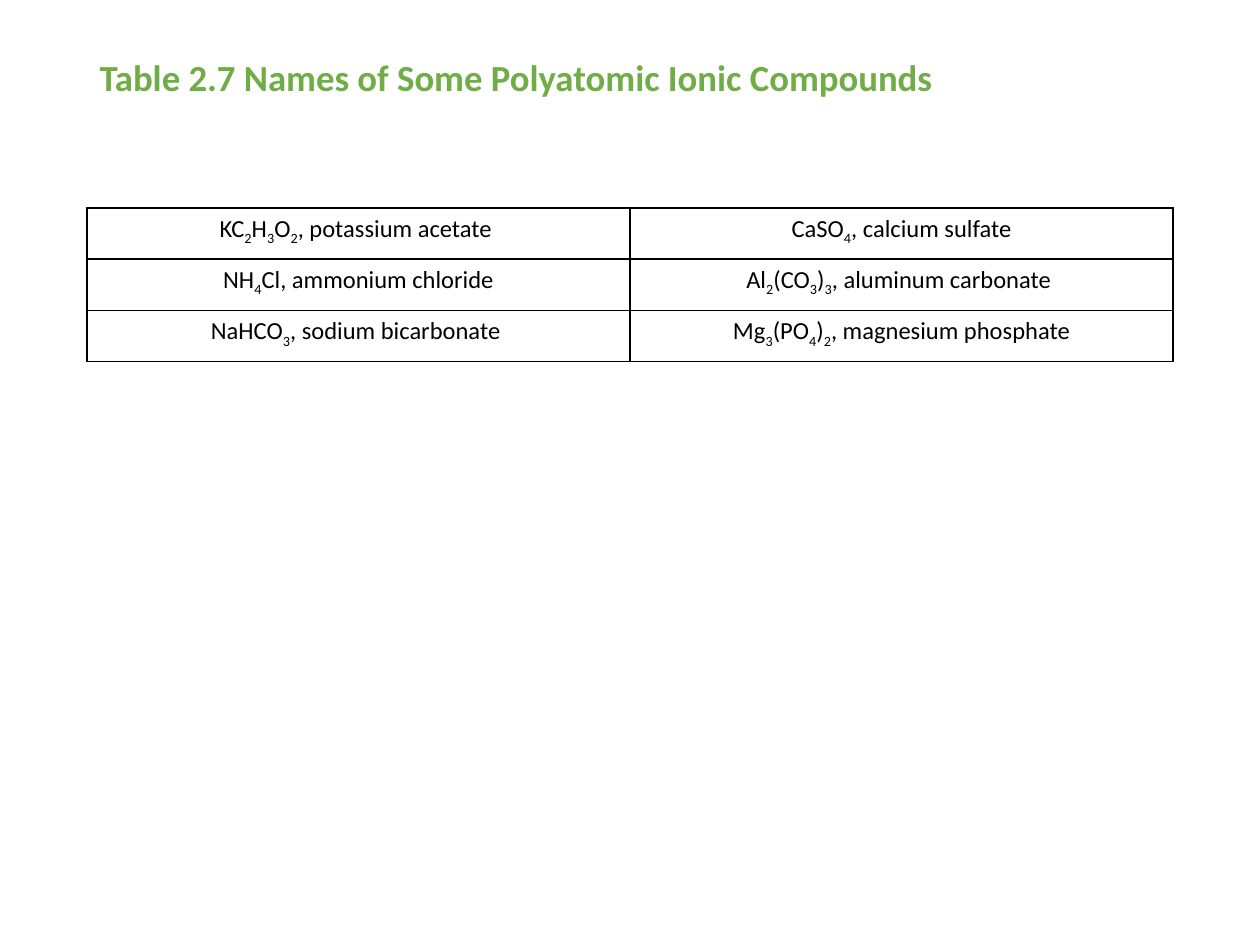
from itertools import groupby

from lxml.etree import SubElement
from pptx import Presentation
from pptx.dml.color import RGBColor
from pptx.enum.text import MSO_ANCHOR, PP_ALIGN
from pptx.oxml.ns import qn
from pptx.util import Inches, Pt

GREEN = RGBColor(0x70, 0xAD, 0x47)
BLACK = RGBColor(0, 0, 0)
HEAD = {"name": "Calibri", "size": Pt(21), "bold": True}
BODY = {"name": "Calibri", "size": Pt(14), "bold": False}
TITLE = "Table 2.7 Names of Some Polyatomic Ionic Compounds"
NAMES = [
    ["KC2H3O2, potassium acetate ", "CaSO4, calcium sulfate"],
    ["NH4Cl, ammonium chloride", "Al2(CO3)3, aluminum carbonate "],
    ["NaHCO3, sodium bicarbonate ", "Mg3(PO4)2, magnesium phosphate"],
]


class Deck:
    """Holds the style and the current slide, and places elements by shares of its size."""

    def __init__(self):
        self.prs = Presentation()
        self.prs.slide_width, self.prs.slide_height = Inches(10), Inches(7.5)
        self.slide = self.prs.slides.add_slide(self.prs.slide_layouts[5])

    def place(self, left, top, width, height):
        wide, high = self.prs.slide_width, self.prs.slide_height
        return [int(n) for n in (left * wide, top * high, width * wide, height * high)]

    def style(self, font, look, color):
        for key, value in look.items():
            setattr(font, key, value)
        font.color.rgb = color

    def title(self, text, *box):
        shape = self.slide.shapes.title
        shape.left, shape.top, shape.width, shape.height = self.place(*box)
        frame = shape.text_frame
        frame.word_wrap = True
        frame.vertical_anchor = MSO_ANCHOR.MIDDLE
        para = frame.paragraphs[0]
        para.alignment, para.line_spacing = PP_ALIGN.LEFT, 0.9
        run = para.add_run()
        run.text = text
        self.style(run.font, HEAD, GREEN)

    def border(self, cell):
        props = cell._tc.get_or_add_tcPr()
        for side in ("lnL", "lnR", "lnT", "lnB"):
            line = SubElement(props, qn(f"a:{side}"), w=str(Pt(1)))
            fill = SubElement(line, qn("a:solidFill"))
            SubElement(fill, qn("a:srgbClr"), val=str(BLACK))

    def formula(self, para, text):
        para.alignment = PP_ALIGN.CENTER
        for low, chars in groupby(text, str.isdigit):
            run = para.add_run()
            run.text = "".join(chars)
            self.style(run.font, BODY, BLACK)
            if low:
                run._r.get_or_add_rPr().set("baseline", "-25000")

    def table(self, rows, *box):
        spot = self.place(*box)
        table = self.slide.shapes.add_table(len(rows), len(rows[0]), *spot).table
        table.first_row = table.horz_banding = False
        for r, row in enumerate(rows):
            for c, text in enumerate(row):
                cell = table.cell(r, c)
                self.border(cell)
                cell.fill.background()
                self.formula(cell.text_frame.paragraphs[0], text)


def main():
    deck = Deck()
    deck.title(TITLE, 0.069, 0.4 / 7.5, 0.862, 0.46 / 7.5)
    deck.table(NAMES, 0.069, 0.22, 0.862, 1.22 / 7.5)
    deck.prs.save("out.pptx")


if __name__ == "__main__":
    main()
